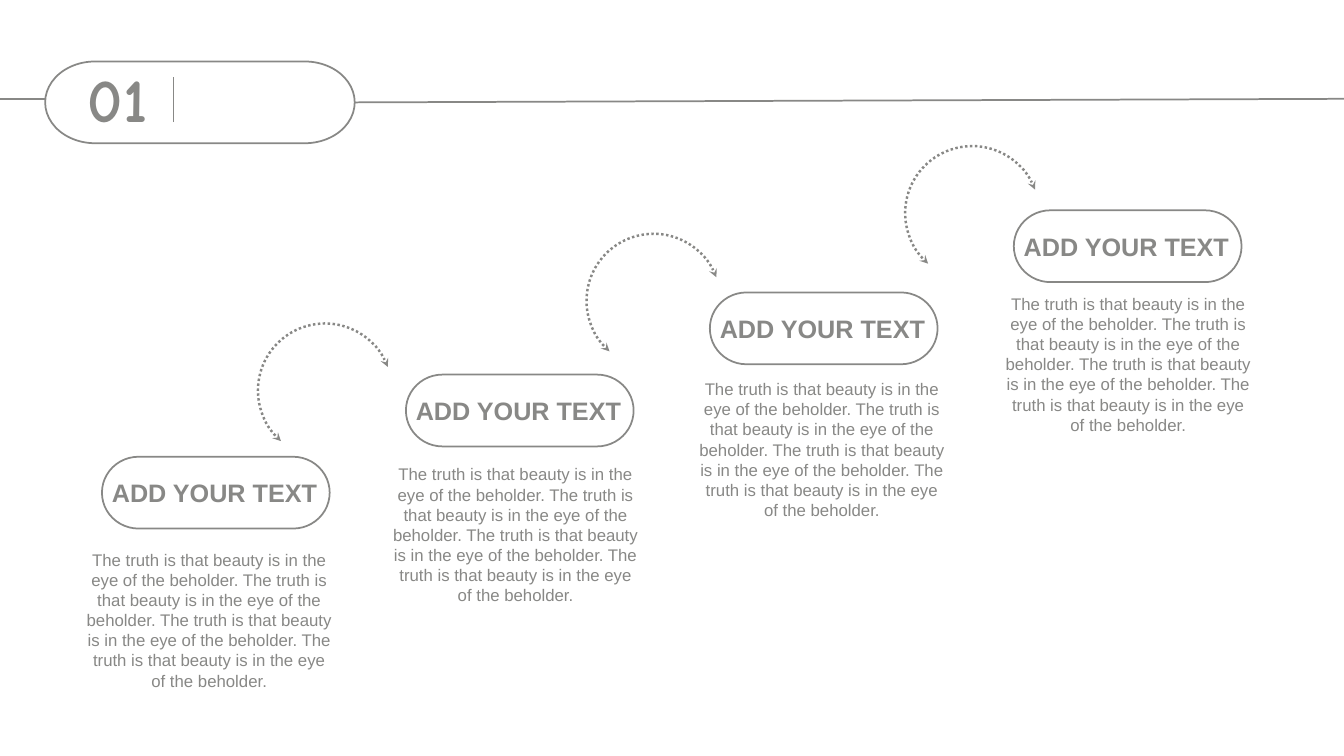
from dataclasses import dataclass

from lxml import etree
from pptx import Presentation
from pptx.dml.color import RGBColor
from pptx.enum import dml, shapes, text
from pptx.oxml import ns
from pptx.util import Cm, Pt


@dataclass(frozen=True)
class Theme:
    grey: RGBColor = RGBColor(0x88, 0x88, 0x86)
    body_font: str = "Arial"
    number_font: str = "Comic Neue"
    number_size: int = 44
    label_size: int = 18
    body_size: int = 12
    outline: float = 1.25
    arc_outline: float = 1.75


@dataclass(frozen=True)
class Box:
    left: float
    top: float
    width: float
    height: float

    def lengths(self) -> tuple:
        return Cm(self.left), Cm(self.top), Cm(self.width), Cm(self.height)


@dataclass(frozen=True)
class Step:
    pill: Box
    label: Box
    story: Box


THEME = Theme()
SLIDE_WIDTH, SLIDE_HEIGHT = 33.87, 19.05
LABEL = "ADD YOUR TEXT"
STORY = " ".join(["The truth is that beauty is in the eye of the beholder."] * 4)

HEADER = Box(1.14, 1.55, 7.8, 2.06)
NUMBER = Box(1.96, 1.42, 2.01, 2.13)
RULE_Y = 2.49
DIVIDER_X = 4.37

STEPS = [
    Step(
        pill=Box(2.57 + 7.66 * i, 11.51 - 2.07 * i, 5.74, 1.81),
        label=Box(2.57 + 7.66 * i, 11.91 - 2.07 * i, 5.74, 1.02),
        story=Box(1.91 + 7.72 * i, 13.72 - 2.15 * i, 6.73, 3.84),
    )
    for i in range(4)
]
ARCS = [Box(left, top, 3.38, 3.38)
        for left, top in ((6.5, 8.15), (14.78, 5.89), (22.81, 3.68))]


def draw_outline(parent, kind, box: Box, width: float = THEME.outline):
    """Add an unfilled grey shape to a slide or group's shapes."""
    shape = parent.add_shape(kind, *box.lengths())
    shape.shadow.inherit = False
    shape.fill.background()
    shape.line.color.rgb = THEME.grey
    shape.line.width = Pt(width)
    return shape


def draw_line(parent, x1: float, y1: float, x2: float, y2: float):
    line = parent.add_connector(
        shapes.MSO_CONNECTOR.STRAIGHT, Cm(x1), Cm(y1), Cm(x2), Cm(y2))
    line.line.color.rgb = THEME.grey
    line.line.width = Pt(THEME.outline)
    etree.SubElement(line._element.spPr, ns.qn("a:effectLst"))
    return line


def write(shape, words: str, size: int, font: str = THEME.body_font,
          bold: bool = False, wrap: bool = True,
          align: text.PP_ALIGN = text.PP_ALIGN.LEFT) -> None:
    frame = shape.text_frame
    frame.text = words
    frame.word_wrap = wrap
    frame.auto_size = text.MSO_AUTO_SIZE.SHAPE_TO_FIT_TEXT
    frame.vertical_anchor = text.MSO_ANCHOR.TOP
    paragraph = frame.paragraphs[0]
    paragraph.alignment = align
    for run in paragraph.runs:
        run.font.name = font
        run.font.size = Pt(size)
        run.font.bold = bold
        run.font.color.rgb = THEME.grey


def draw_header(slide) -> None:
    number = slide.shapes.title
    number.left, number.top, number.width, number.height = NUMBER.lengths()
    write(number, "01", THEME.number_size, THEME.number_font, bold=True)

    pill = draw_outline(
        slide.shapes, shapes.MSO_SHAPE.FLOWCHART_TERMINATOR, HEADER)
    right_rule = draw_line(slide.shapes, HEADER.left + HEADER.width,
                           HEADER.top + HEADER.height / 2, SLIDE_WIDTH, RULE_Y)
    right_rule.begin_connect(pill, 3)
    draw_line(slide.shapes, 0, RULE_Y, HEADER.left, RULE_Y)
    draw_line(slide.shapes, DIVIDER_X, 3.08, DIVIDER_X, 1.93)


def draw_step(slide, step: Step) -> None:
    group = slide.shapes.add_group_shape()
    draw_outline(
        group.shapes, shapes.MSO_SHAPE.FLOWCHART_TERMINATOR, step.pill)
    label = group.shapes.add_textbox(*step.label.lengths())
    write(label, LABEL, THEME.label_size, bold=True, wrap=False)
    story = slide.shapes.add_textbox(*step.story.lengths())
    write(story, STORY, THEME.body_size, align=text.PP_ALIGN.CENTER)


def draw_arc(slide, box: Box) -> None:
    """Add a dotted arc with an arrowhead at both ends."""
    arc = draw_outline(
        slide.shapes, shapes.MSO_SHAPE.ARC, box, THEME.arc_outline)
    arc.adjustments[0] = 162
    arc.adjustments[1] = 70.97
    arc.rotation = 221.1
    arc.line.dash_style = dml.MSO_LINE.ROUND_DOT
    outline = arc._element.spPr.find(ns.qn("a:ln"))
    for end in ("a:headEnd", "a:tailEnd"):
        etree.SubElement(outline, ns.qn(end), type="stealth")


def main() -> None:
    deck = Presentation()
    deck.slide_width, deck.slide_height = Cm(SLIDE_WIDTH), Cm(SLIDE_HEIGHT)
    slide = deck.slides.add_slide(deck.slide_layouts.get_by_name("Title Only"))
    draw_header(slide)
    for arc in ARCS:
        draw_arc(slide, arc)
    for step in STEPS:
        draw_step(slide, step)
    deck.save("out.pptx")


if __name__ == "__main__":
    main()
